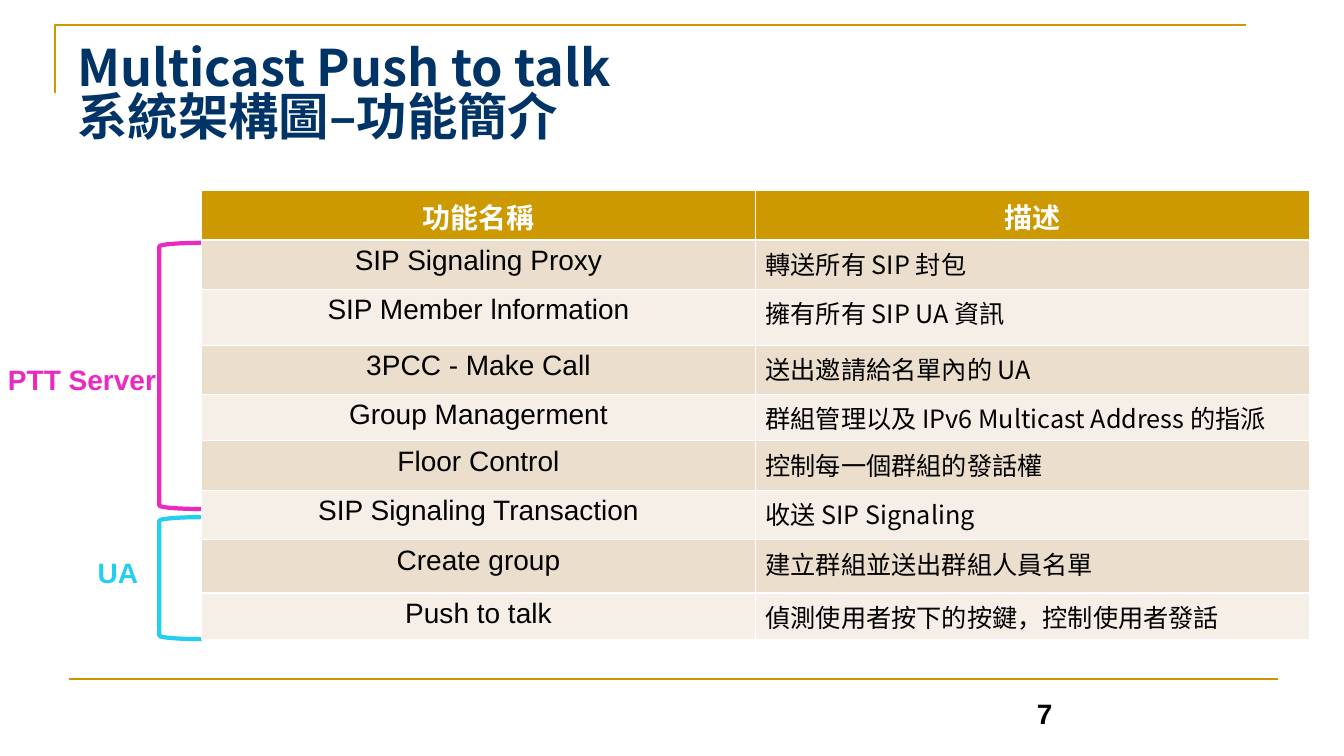
from typing import NamedTuple

from lxml.etree import SubElement as SubEl
from pptx import Presentation
from pptx.dml.color import RGBColor
from pptx.enum.shapes import MSO_CONNECTOR as Link, MSO_SHAPE as Form
from pptx.enum.text import MSO_ANCHOR as Anchor, MSO_AUTO_SIZE as Fit, PP_ALIGN as Align
from pptx.oxml.ns import qn
from pptx.util import Pt

SANS, HAN = "Arial", "Noto Sans CJK SC"
GOLD, WHITE, BLACK = "CC9900", "FFFFFF", "000000"
BANDS = ("ECDECC", "F6EFE7")
LEFT, TOP, COL = 144, 136.1, 395.6


class Style(NamedTuple):
    size: float
    font: str
    tint: str
    bold: bool = False
    align: Align = Align.LEFT


class Row(NamedTuple):
    name: str
    text: str
    high: float


class Group(NamedTuple):
    name: str
    tint: str
    box: tuple[float, float, float, float]
    top: float
    high: float


HEAD = Style(20, SANS, WHITE, True, Align.CENTER)
NAME = Style(20, SANS, BLACK, False, Align.CENTER)
NOTE = Style(18, HAN, BLACK)

ROWS = (
    Row("功能名稱", "描述", 35.3),
    Row("SIP Signaling Proxy", "轉送所有 SIP 封包", 35.3),
    Row("SIP Member lnformation", "擁有所有 SIP UA 資訊", 40),
    Row("3PCC - Make Call", "送出邀請給名單內的 UA", 35),
    Row("Group Managerment", "群組管理以及 IPv6 Multicast Address 的指派", 33.3),
    Row("Floor Control", "控制每一個群組的發話權", 35.2),
    Row("SIP Signaling Transaction", "收送 SIP Signaling", 35.5),
    Row("Create group", "建立群組並送出群組人員名單", 38),
    Row("Push to talk", "偵測使用者按下的按鍵，控制使用者發話", 33),
)
GROUPS = (
    Group("PTT Server", "EB29C1", (-1.4, 255.6, 121, 31.7), 173.5, 190.1),
    Group("UA", "24CEF0", (62.6, 393.1, 43.9, 31.7), 369.4, 87.1),
)


def pts(*vals: float) -> list[Pt]:
    return [Pt(val) for val in vals]


def paint(part, tint: str) -> None:
    """Give a fill or a line one solid colour."""
    fill = getattr(part, "fill", part)
    fill.solid()
    fill.fore_color.rgb = RGBColor.from_string(tint)


def stroke(shape, tint: str, width: float) -> None:
    paint(shape.line, tint)
    shape.line.width = Pt(width)


def write(frame, lines: tuple[str, ...], style: Style, **form) -> None:
    """Fill a text frame with one paragraph, broken into the given lines."""
    for key, val in form.items():
        setattr(frame, key, val)
    para = frame.paragraphs[0]
    para.alignment = style.align
    for num, line in enumerate(lines):
        if num:
            para.add_line_break()
        run = para.add_run()
        run.text = line
        looks = {"size": Pt(style.size), "bold": style.bold, "name": style.font}
        for key, val in looks.items():
            setattr(run.font, key, val)
        paint(run.font, style.tint)
        SubEl(run.font._element, qn("a:ea"), typeface=HAN)


def draw_frame(shapes) -> None:
    """Draw the gold corner, the foot line and the page number."""
    pen = shapes.build_freeform(*pts(39.6, 66.6), scale=1.0)
    pen.add_line_segments([pts(39.6, 18), pts(889.9, 18)], close=False)
    edge = pen.convert_to_shape()
    edge.shadow.inherit = False
    edge.fill.background()
    stroke(edge, GOLD, 1.5)

    page = shapes.add_shape(Form.RECTANGLE, *pts(724.3, 494, 43.9, 31.7))
    page.shadow.inherit = False
    paint(page, WHITE)
    page.line.fill.background()
    write(page.text_frame, ("7",), Style(20, SANS, BLACK, True, Align.CENTER))

    foot = shapes.add_connector(Link.STRAIGHT, *pts(49, 485.3, 913, 485.3))
    SubEl(foot._element.spPr, qn("a:effectLst"))
    stroke(foot, "C89600", 1.5)


def draw_title(title) -> None:
    for key, val in zip(("left", "top", "width", "height"), pts(48, 21.6, 864, 90)):
        setattr(title, key, val)
    write(title.text_frame, ("Multicast Push to talk", "系統架構圖–功能簡介"),
          Style(36, HAN, "003366", True), auto_size=Fit.NONE, word_wrap=True,
          vertical_anchor=Anchor.TOP, margin_top=Pt(11.5))
    title.text_frame.paragraphs[0].line_spacing = 0.82


def draw_group(shapes, group: Group) -> None:
    """Draw a label and the bracket that spans its rows."""
    label = shapes.add_textbox(*pts(*group.box))
    write(label.text_frame, (group.name,), Style(20, SANS, group.tint, True),
          word_wrap=False, auto_size=Fit.SHAPE_TO_FIT_TEXT)
    brace = shapes.add_shape(Form.LEFT_BRACKET, *pts(113.8, group.top, 30.2, group.high))
    brace.shadow.inherit = False
    brace.fill.background()
    stroke(brace, group.tint, 3)


def draw_table(shapes) -> None:
    high = sum(row.high for row in ROWS)
    table = shapes.add_table(len(ROWS), 2, *pts(LEFT, TOP, 2 * COL, high)).table
    for col in table.columns:
        col.width = Pt(COL)
    for num, row in enumerate(ROWS):
        table.rows[num].height = Pt(row.high)
        tint = BANDS[(num - 1) % 2] if num else GOLD
        looks = (NAME, NOTE) if num else (HEAD, HEAD)
        for cell, text, style in zip(table.rows[num].cells, (row.name, row.text), looks):
            paint(cell, tint)
            write(cell.text_frame, (text,), style)


def main() -> None:
    deck = Presentation()
    deck.slide_width, deck.slide_height = pts(960, 540)
    shapes = deck.slides.add_slide(deck.slide_layouts[5]).shapes
    draw_frame(shapes)
    draw_title(shapes.title)
    for group in GROUPS:
        draw_group(shapes, group)
    draw_table(shapes)
    deck.save("out.pptx")


if __name__ == "__main__":
    main()
